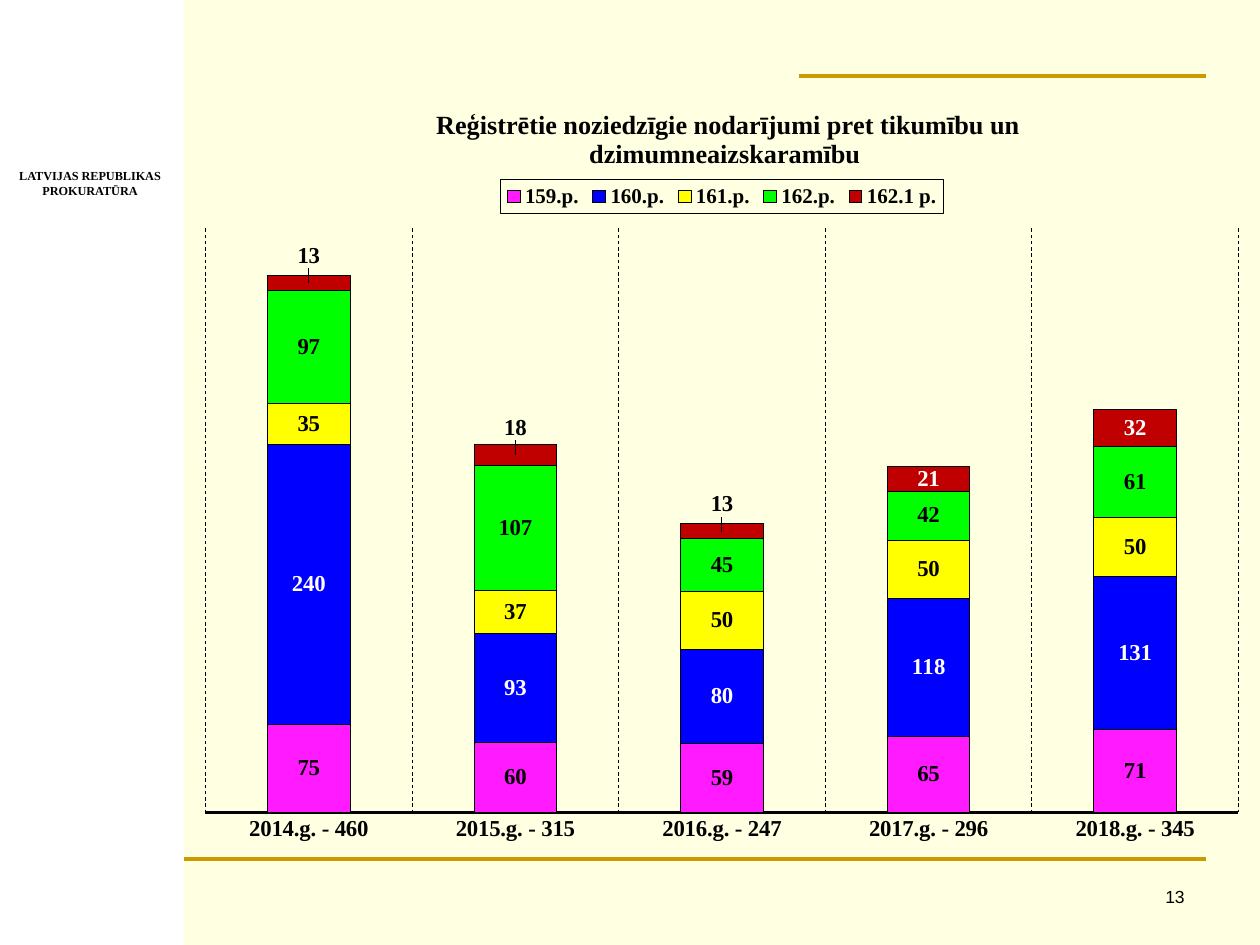
"""Build the slide on registered offences against morality, 2014 to 2018."""
from lxml import etree
from pptx import Presentation
from pptx.chart.data import CategoryChartData
from pptx.dml.color import RGBColor
from pptx.enum.chart import XL_CHART_TYPE, XL_LEGEND_POSITION, XL_TICK_MARK
from pptx.enum.dml import MSO_LINE
from pptx.enum.shapes import MSO_CONNECTOR, MSO_SHAPE
from pptx.enum.text import PP_ALIGN
from pptx.oxml import parse_xml
from pptx.oxml.ns import nsdecls, qn
from pptx.util import Inches, Pt

STACKED = XL_CHART_TYPE.COLUMN_STACKED
TOP = XL_LEGEND_POSITION.TOP
NO_TICK = XL_TICK_MARK.NONE
DASH = MSO_LINE.DASH
STRAIGHT = MSO_CONNECTOR.STRAIGHT
RECTANGLE = MSO_SHAPE.RECTANGLE
CENTER, RIGHT = PP_ALIGN.CENTER, PP_ALIGN.RIGHT

CREAM = RGBColor(0xFF, 0xFF, 0xE1)
WHITE = RGBColor(0xFF, 0xFF, 0xFF)
BLACK = RGBColor(0, 0, 0)
GOLD = RGBColor(0xCC, 0x99, 0x00)
PINK = RGBColor(0xFF, 0x1A, 0xFF)
BLUE = RGBColor(0, 0, 0xFF)
YELLOW = RGBColor(0xFF, 0xFF, 0)
GREEN = RGBColor(0, 0xFF, 0)
RED = RGBColor(0xC0, 0, 0)

SERIF, SANS = "Times New Roman", "Arial"
WIDTH, HEIGHT = 10, 7.5
BAND = 1.46
RULE_END = 9.57
RULE_TOP, RULE_BOTTOM = 0.6, 6.82

YEARS = ["2014.g. - 460", "2015.g. - 315", "2016.g. - 247",
         "2017.g. - 296", "2018.g. - 345"]
ARTICLES = [
    ("159.p.", (75, 60, 59, 65, 71), PINK, BLACK),
    ("160.p.", (240, 93, 80, 118, 131), BLUE, WHITE),
    ("161.p.", (35, 37, 50, 50, 50), YELLOW, BLACK),
    ("162.p.", (97, 107, 45, 42, 61), GREEN, BLACK),
    ("162.1 p.", (13, 18, 13, 21, 32), RED, WHITE),
]
THIN_SEGMENT = 20
LABEL_LIFT = -0.034


def style_font(font, size, color=BLACK, bold=True, name=SERIF):
    """Set the typeface, size, weight and colour of a font."""
    font.name, font.size, font.bold = name, Pt(size), bold
    font.color.rgb = color


def style_line(line, color, width):
    """Set the colour and width of a line."""
    line.color.rgb = color
    line.width = Pt(width)


def add_band(slide):
    """Add the white band on the left."""
    band = slide.shapes.add_shape(RECTANGLE, 0, 0, Inches(BAND), Inches(HEIGHT))
    band.shadow.inherit = False
    band.fill.solid()
    band.fill.fore_color.rgb = WHITE
    band.line.fill.background()


def add_rule(slide, start, y):
    """Add a horizontal gold rule that ends at the right margin."""
    rule = slide.shapes.add_connector(
        STRAIGHT, Inches(start), Inches(y), Inches(RULE_END), Inches(y))
    style_line(rule.line, GOLD, 2.25)
    etree.SubElement(rule._element.spPr, qn("a:effectLst"))


def add_text(slide, place, text, align, wrap, **font):
    """Add a text box with one style throughout."""
    frame = slide.shapes.add_textbox(*map(Inches, place)).text_frame
    frame.word_wrap = wrap
    frame.text = text
    for paragraph in frame.paragraphs:
        paragraph.alignment = align
        for run in paragraph.runs:
            style_font(run.font, **font)


def manual_layout(x, y, width=None, height=None, edge=True, inner=False):
    """Return a chart layout in shares of the chart's size."""
    target = '<c:layoutTarget val="inner"/>' if inner else ""
    modes = '<c:xMode val="edge"/><c:yMode val="edge"/>' if edge else ""
    size = f'<c:w val="{width}"/><c:h val="{height}"/>' if width else ""
    return parse_xml(
        f'<c:layout {nsdecls("c")}><c:manualLayout>{target}{modes}'
        f'<c:x val="{x}"/><c:y val="{y}"/>{size}</c:manualLayout></c:layout>')


def set_layout(element, anchor, layout):
    """Put a layout after the named child, or first when there is no anchor."""
    for old in element.findall(qn("c:layout")):
        element.remove(old)
    if anchor is None:
        element.insert(0, layout)
    else:
        element.find(qn(anchor)).addnext(layout)


def style_series(series, fill, label_color):
    """Colour a series and show its values."""
    series.format.fill.solid()
    series.format.fill.fore_color.rgb = fill
    style_line(series.format.line, BLACK, 0.5)
    labels = series.data_labels
    labels.show_value = True
    style_font(labels.font, 13, label_color)


def lift_thin_labels(series):
    """Move the labels of thin top segments above their columns."""
    for index, value in enumerate(series.values):
        if value < THIN_SEGMENT:
            label = series.points[index].data_label
            style_font(label.font, 13)
            entry = series.data_labels._element.find(qn("c:dLbl") + f"[{index + 1}]")
            set_layout(entry, "c:idx", manual_layout(0, LABEL_LIFT, edge=False))


def style_axes(chart):
    """Show the years with dashed dividers and hide the value axis."""
    years, counts = chart.category_axis, chart.value_axis
    years.major_tick_mark = NO_TICK
    style_font(years.tick_labels.font, 13)
    style_line(years.format.line, BLACK, 1.5)
    years.has_major_gridlines = True
    divider = years.major_gridlines.format.line
    style_line(divider, BLACK, 0.5)
    divider.dash_style = DASH
    counts.minimum_scale, counts.maximum_scale = 0, 500
    counts.has_major_gridlines = False
    counts.visible = False


def style_title(chart):
    """Write the chart title."""
    title = chart.chart_title
    title.text_frame.text = ("Reģistrētie noziedzīgie nodarījumi pret tikumību un "
                             "dzimumneaizskaramību ")
    style_font(title.text_frame.paragraphs[0].runs[0].font, 15)
    title.include_in_layout = False
    set_layout(title._element, "c:tx", manual_layout(0.23, 0.035))


def style_legend(chart):
    """Place the framed legend below the title."""
    chart.has_legend = True
    legend = chart.legend
    legend.position = TOP
    legend.include_in_layout = False
    style_font(legend.font, 12)
    set_layout(legend._element, "c:legendPos",
               manual_layout(0.294, 0.133, 0.412, 0.043))
    frame = parse_xml(
        f'<c:spPr {nsdecls("c", "a")}><a:solidFill><a:srgbClr val="{CREAM}"/></a:solidFill>'
        f'<a:ln w="6350"><a:solidFill><a:srgbClr val="{BLACK}"/></a:solidFill></a:ln></c:spPr>')
    legend._element.find(qn("c:txPr")).addprevious(frame)


def add_offence_chart(slide):
    """Add the stacked columns of offences by article and year."""
    data = CategoryChartData()
    data.categories = YEARS
    for name, values, _, _ in ARTICLES:
        data.add_series(name, values)
    chart = slide.shapes.add_chart(
        STACKED, Inches(BAND), Inches(RULE_TOP), Inches(WIDTH - BAND),
        Inches(RULE_BOTTOM - RULE_TOP), data).chart
    style_font(chart.font, 10, bold=False)
    plot = chart.plots[0]
    plot.gap_width, plot.overlap = 150, 100
    plot.vary_by_categories = False
    for series, (_, _, fill, label_color) in zip(plot.series, ARTICLES):
        style_series(series, fill, label_color)
    lift_thin_labels(plot.series[len(ARTICLES) - 1])
    style_axes(chart)
    style_title(chart)
    style_legend(chart)
    set_layout(chart._chartSpace.chart.plotArea, None,
               manual_layout(0.02, 0.195, 0.96, 0.745, inner=True))


def main():
    """Build and save the slide."""
    deck = Presentation()
    deck.slide_width, deck.slide_height = Inches(WIDTH), Inches(HEIGHT)
    slide = deck.slides.add_slide(deck.slide_layouts[6])
    slide.background.fill.solid()
    slide.background.fill.fore_color.rgb = CREAM
    add_band(slide)
    add_offence_chart(slide)
    add_rule(slide, BAND, RULE_BOTTOM)
    add_rule(slide, 6.34, RULE_TOP)
    add_text(slide, (0.05, 1.29, 1.33, 0.33), "LATVIJAS REPUBLIKAS\nPROKURATŪRA",
             CENTER, False, size=7)
    add_text(slide, (7.42, 6.98, 2.08, 0.35), "13", RIGHT, True,
             size=10, bold=False, name=SANS)
    deck.save("out.pptx")


if __name__ == "__main__":
    main()
